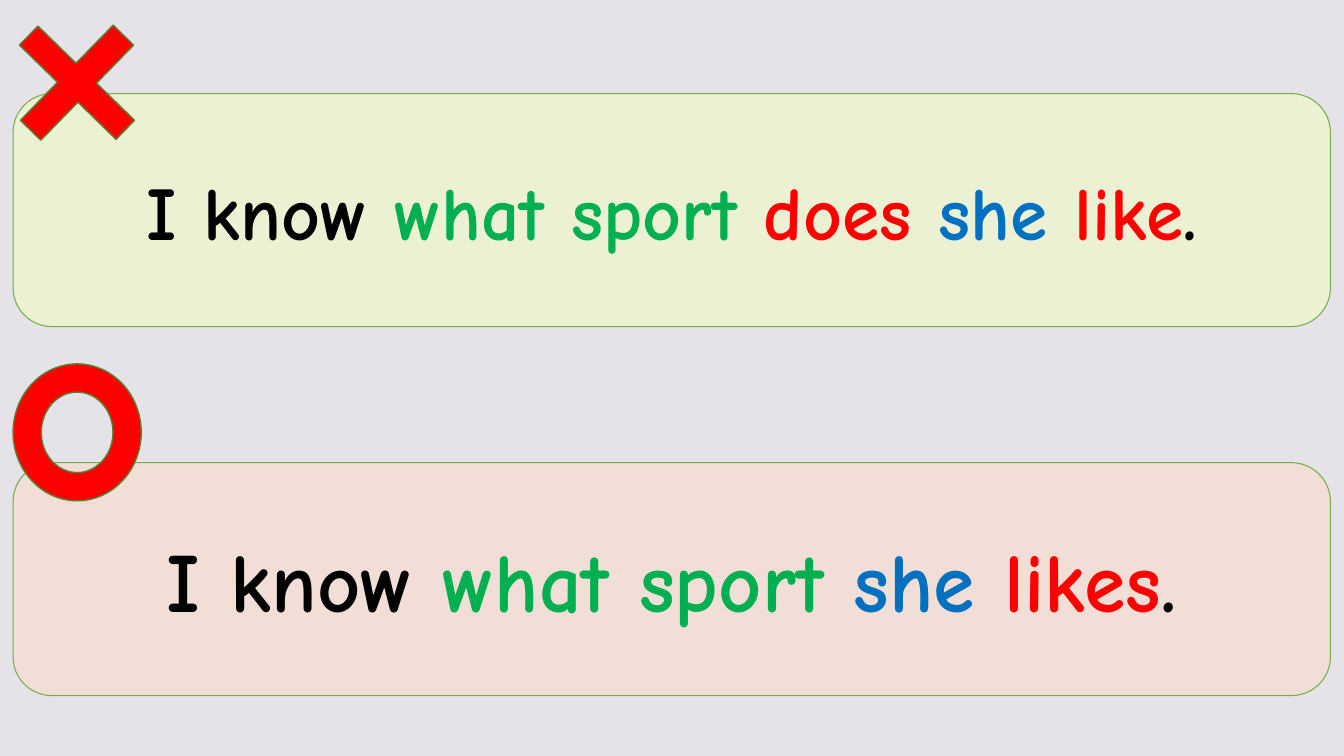
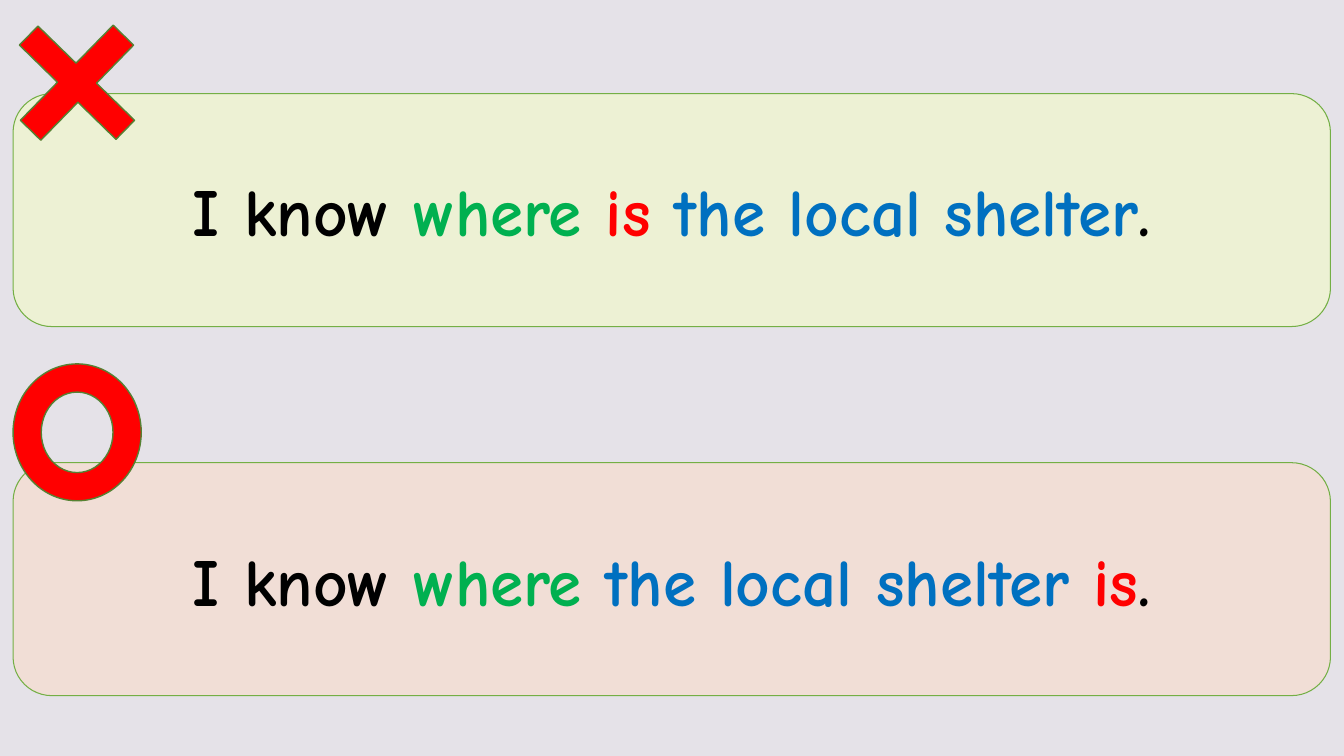
"""Build two grammar slides, each with a wrong and a right sentence."""
from pptx import Presentation, util as u
from pptx.dml.color import RGBColor
from pptx.enum import shapes, text

FONT = "Comic Neue"
HUES = {
    "back": "E5E2E8", "wrong": "EDF1D4", "right": "F1DED6",
    "edge": "74AF45", "rim": "568133",
    "black": "000000", "green": "00B050", "red": "FF0000", "blue": "0070C0",
}
KIND = shapes.MSO_SHAPE
START = ("I know ", "black")
STOP = (".", "black")
SLIDES = [
    (
        (54, [("what sport ", "green"), ("does ", "red"), ("she ", "blue"), ("like", "red")]),
        (60, [("what sport ", "green"), ("she ", "blue"), ("likes", "red")]),
    ),
    (
        (48, [("where ", "green"), ("is ", "red"), ("the local shelter", "blue")]),
        (48, [("where ", "green"), ("the local shelter ", "blue"), ("is", "red")]),
    ),
]


def hue(name):
    return RGBColor.from_string(HUES[name])


def add_shape(slide, kind, box, fill, line, width):
    shape = slide.shapes.add_shape(kind, *map(u.Cm, box))
    shape.shadow.inherit = False
    shape.fill.solid()
    shape.fill.fore_color.rgb = hue(fill)
    shape.line.color.rgb = hue(line)
    shape.line.width = u.Pt(width)
    return shape


def add_panel(slide, top, fill, size, words):
    box = (0.33, top, 33.2, 5.87)
    panel = add_shape(slide, KIND.FLOWCHART_ALTERNATE_PROCESS, box, fill, "edge", 0.75)
    frame = panel.text_frame
    frame.word_wrap = True
    frame.vertical_anchor = text.MSO_ANCHOR.MIDDLE
    line = frame.paragraphs[0]
    line.alignment = text.PP_ALIGN.CENTER
    line.font.name = FONT
    line.font.size = u.Pt(size)
    line.font.bold = True
    for word, color in [START, *words, STOP]:
        run = line.add_run()
        run.text = word
        run.font.color.rgb = hue(color)


def add_mark(slide, kind, box, adjust, turn=0):
    mark = add_shape(slide, kind, box, "red", "rim", 1)
    mark.adjustments[0] = adjust
    mark.rotation = turn


def add_slide(deck, wrong, right):
    slide = deck.slides.add_slide(deck.slide_layouts[6])
    slide.background.fill.solid()
    slide.background.fill.fore_color.rgb = hue("back")
    add_panel(slide, 2.36, "wrong", *wrong)
    add_mark(slide, KIND.CROSS, (0.24, 0.41, 3.4, 3.35), 0.4, 44.3)
    add_panel(slide, 11.66, "right", *right)
    add_mark(slide, KIND.DONUT, (0.33, 9.17, 3.23, 3.45), 0.22)


def main():
    deck = Presentation()
    deck.slide_width, deck.slide_height = u.Cm(33.87), u.Cm(19.05)
    for wrong, right in SLIDES:
        add_slide(deck, wrong, right)
    deck.save("out.pptx")


if __name__ == "__main__":
    main()
